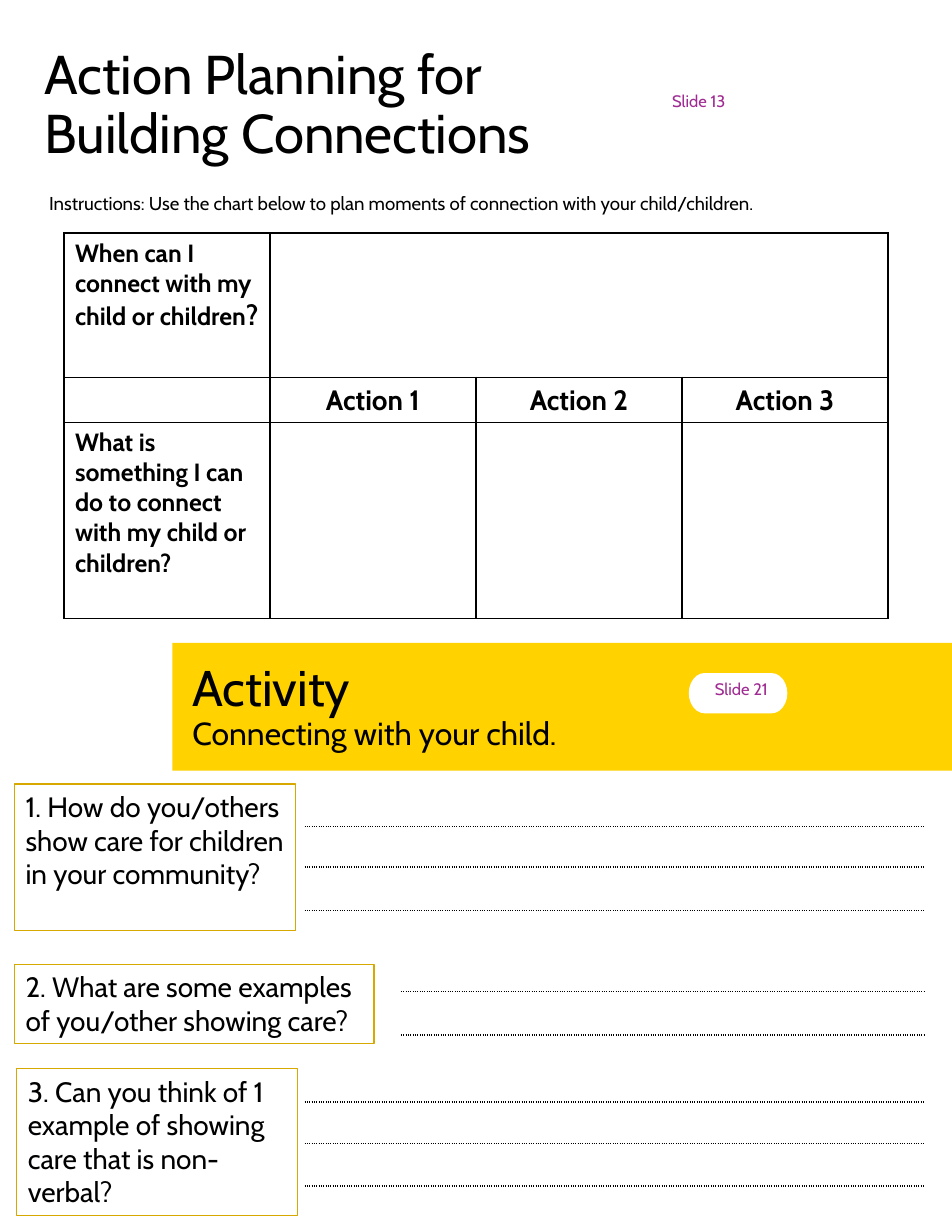
import pptx
import pptx.dml.color
import pptx.enum.shapes
import pptx.enum.text
import pptx.oxml.ns
import pptx.util
from lxml import etree

Inches = pptx.util.Inches
SHAPES = pptx.enum.shapes.MSO_SHAPE
ALIGN = pptx.enum.text.PP_ALIGN
ANCHOR = pptx.enum.text.MSO_ANCHOR
AUTO_SIZE = pptx.enum.text.MSO_AUTO_SIZE
qn = pptx.oxml.ns.qn


def color(value):
    return pptx.dml.color.RGBColor.from_string(value)


def add_text(tf, *lines, size=18, ink="000000", bold=False, align=None, spacing=None):
    """Write each line as a paragraph; a line is a string or a list of (text, size)."""
    for i, line in enumerate(lines):
        p = tf.add_paragraph() if i else tf.paragraphs[0]
        p.alignment = align or ALIGN.LEFT
        if spacing:
            p.line_spacing = spacing
        for text, run_size in [(line, size)] if isinstance(line, str) else line:
            if text == "\n":
                p.add_line_break()
                continue
            r = p.add_run()
            r.text = text
            r.font.name = "Cabin"
            r.font.size = pptx.util.Pt(run_size)
            r.font.bold = bold
            r.font.color.rgb = color(ink)


def set_borders(cell, sides, dash="solid"):
    """Draw 1 pt black borders on the named sides and clear the others."""
    tcPr = cell._tc.get_or_add_tcPr()
    for side in "LRTB":
        ln = etree.SubElement(tcPr, qn("a:ln" + side), w="12700")
        if side in sides:
            fill = etree.SubElement(ln, qn("a:solidFill"))
            etree.SubElement(fill, qn("a:srgbClr"), val="000000")
            etree.SubElement(ln, qn("a:prstDash"), val=dash)
        else:
            etree.SubElement(ln, qn("a:noFill"))


class Page:
    """Holds the slide and the worksheet's style."""

    accent = "A02B93"
    yellow = "FFD200"
    outline = "D7A800"

    def __init__(self, prs):
        self.s = prs.slides.add_slide(prs.slide_layouts[6])

    def text(self, x, y, w, h, *lines, anchor=ANCHOR.MIDDLE, **style):
        sp = self.s.shapes.add_textbox(Inches(x), Inches(y), Inches(w), Inches(h))
        tf = sp.text_frame
        tf.word_wrap = True
        tf.vertical_anchor = anchor
        add_text(tf, *lines, **style)

    def slide_label(self, x, y, h, text):
        self.text(x, y, 1.52, h, text, size=10.7, ink=self.accent,
                  align=ALIGN.CENTER, spacing=0.9)

    def shape(self, kind, x, y, w, h, fill=None, line=None):
        sp = self.s.shapes.add_shape(kind, Inches(x), Inches(y), Inches(w), Inches(h))
        sp.shadow.inherit = False
        if fill:
            sp.fill.solid()
            sp.fill.fore_color.rgb = color(fill)
        else:
            sp.fill.background()
        if line:
            sp.line.color.rgb = color(line)
            sp.line.width = pptx.util.Pt(0.75)
        else:
            sp.line.fill.background()
        return sp

    def question(self, x, y, w, h, text):
        tf = self.shape(SHAPES.RECTANGLE, x, y, w, h, line=self.outline).text_frame
        tf.word_wrap = True
        tf.auto_size = AUTO_SIZE.SHAPE_TO_FIT_TEXT
        tf.vertical_anchor = ANCHOR.TOP
        add_text(tf, text)

    def table(self, x, y, cols, rows, sides="LRTB", dash="solid", fill=None):
        frame = self.s.shapes.add_table(len(rows), len(cols), Inches(x), Inches(y),
                                        Inches(sum(cols)), Inches(sum(rows)))
        table = frame.table
        table.first_row = table.horz_banding = False
        for column, width in zip(table.columns, cols):
            column.width = Inches(width)
        for row, height in zip(table.rows, rows):
            row.height = Inches(height)
        for cell in table.iter_cells():
            set_borders(cell, sides, dash)
            if fill:
                cell.fill.solid()
                cell.fill.fore_color.rgb = color(fill)
            else:
                cell.fill.background()
        return table

    def answer_line(self, x, y, w):
        self.table(x, y, [w], [0.4], sides="B", dash="sysDot")


def main():
    prs = pptx.Presentation()
    prs.slide_width, prs.slide_height = Inches(8.5), Inches(11)
    page = Page(prs)

    page.text(0.3, 0.02, 7.22, 1.86, "Action Planning for", "Building Connections",
              size=35.1, spacing=0.9)

    plan = page.table(0.57, 2.08, [1.84] * 4, [1.29, 0.4, 1.75], fill="FFFFFF")
    plan.cell(0, 1).merge(plan.cell(0, 3))
    add_text(plan.cell(0, 0).text_frame,
             [("When can I connect with my child or children", 16), ("?", 18)], bold=True)
    for i in range(1, 4):
        add_text(plan.cell(1, i).text_frame, f"Action {i}", bold=True, align=ALIGN.CENTER)
    add_text(plan.cell(2, 0).text_frame,
             "What is something I can do to connect with my child or children?",
             size=16, bold=True)

    page.text(0.34, 1.66, 7.86, 0.3,
              "Instructions: Use the chart below to plan moments of connection "
              "with your child/children.", size=12, anchor=ANCHOR.TOP)
    page.slide_label(5.48, 0.4, 1.02, "Slide 13")

    page.shape(SHAPES.RECTANGLE, 1.54, 5.74, 6.96, 1.14, fill=page.yellow)
    page.text(1.62, 5.39, 7.73, 1.86,
              [("Activity", 32.2), ("\n", 32.2), ("Connecting with your child.", 20.5)],
              spacing=0.9)
    page.shape(SHAPES.FLOWCHART_TERMINATOR, 6.15, 6.01, 0.88, 0.36, fill="FFFFFF")
    page.slide_label(5.86, 5.94, 0.45, "Slide 21")

    right = 8.26
    for x, tops in [(2.72, [6.98, 7.34, 7.73]), (3.58, [8.45, 8.84]),
                    (2.72, [9.44, 9.81, 10.19])]:
        for y in tops:
            page.answer_line(x, y, right - x)

    page.question(0.13, 7, 2.51, 1.31,
                  "1. How do you/others show care for children in your community?")
    page.question(0.13, 8.61, 3.21, 0.71,
                  "2. What are some examples of you/other showing care?")
    page.question(0.15, 9.54, 2.51, 1.31,
                  "3. Can you think of 1 example of showing care that is non-verbal?")

    prs.save("out.pptx")


if __name__ == "__main__":
    main()
